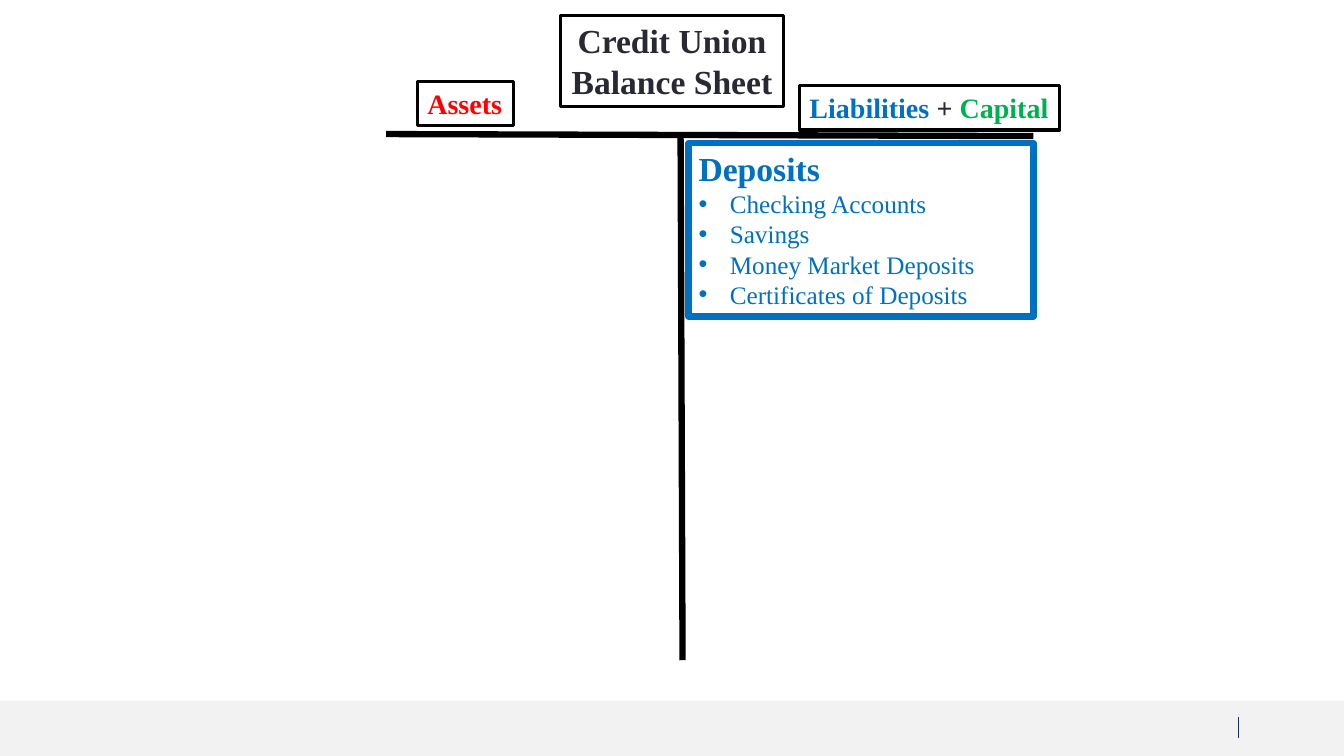
"""Build a slide with a credit union balance sheet as a T-account."""
from lxml.etree import SubElement
from pptx import Presentation
from pptx.dml.color import RGBColor
from pptx.enum.shapes import MSO_CONNECTOR, MSO_SHAPE
from pptx.enum.text import MSO_ANCHOR, MSO_AUTO_SIZE, PP_ALIGN
from pptx.oxml.ns import qn
from pptx.util import Inches, Pt

BLACK = RGBColor(0x00, 0x00, 0x00)
INK = RGBColor(0x29, 0x29, 0x34)
RED = RGBColor(0xFF, 0x00, 0x00)
BLUE = RGBColor(0x00, 0x70, 0xC0)
GREEN = RGBColor(0x00, 0xB0, 0x50)
NAVY = RGBColor(0x19, 0x30, 0x61)
PALE = RGBColor(0xF2, 0xF2, 0xF2)


def add_run(p, text, *, size, color, bold=True, font="Times New Roman"):
    r = p.add_run()
    r.text = text
    r.font.name = font
    r.font.size = Pt(size)
    r.font.bold = bold
    r.font.color.rgb = color


class SlideBuilder:
    indent = Inches(0.31)

    def __init__(self, slide):
        self.s = slide

    def band(self, x, y, w, h, color):
        sp = self.s.shapes.add_shape(
            MSO_SHAPE.RECTANGLE, Inches(x), Inches(y), Inches(w), Inches(h))
        sp.shadow.inherit = False
        sp.fill.solid()
        sp.fill.fore_color.rgb = color
        sp.line.fill.background()

    def line(self, x1, y1, x2, y2, color, width):
        cn = self.s.shapes.add_connector(
            MSO_CONNECTOR.STRAIGHT, Inches(x1), Inches(y1), Inches(x2), Inches(y2))
        cn.line.color.rgb = color
        cn.line.width = Pt(width)
        SubElement(cn._element.spPr, qn("a:effectLst"))

    def box(self, x, y, w, h, paragraphs, *, color=BLACK, width=2.25,
            size=20, align=PP_ALIGN.LEFT, wrap=False):
        sp = self.s.shapes.add_textbox(Inches(x), Inches(y), Inches(w), Inches(h))
        sp.line.color.rgb = color
        sp.line.width = Pt(width)
        tf = sp.text_frame
        tf.word_wrap = wrap
        tf.auto_size = MSO_AUTO_SIZE.SHAPE_TO_FIT_TEXT
        tf.vertical_anchor = MSO_ANCHOR.TOP
        for i, runs in enumerate(paragraphs):
            p = tf.add_paragraph() if i else tf.paragraphs[0]
            p.alignment = align
            for text, run_color in runs:
                add_run(p, text, size=size, color=run_color)
        return tf

    def bullet(self, tf, text, color, size):
        p = tf.add_paragraph()
        pPr = p._p.get_or_add_pPr()
        pPr.set("marL", str(self.indent))
        pPr.set("indent", str(-self.indent))
        SubElement(pPr, qn("a:buFont")).set("typeface", "Arial")
        SubElement(pPr, qn("a:buChar")).set("char", "•")
        add_run(p, text, size=size, color=color, bold=False)


def main():
    prs = Presentation()
    prs.slide_width, prs.slide_height = Inches(13.33), Inches(7.5)
    s = SlideBuilder(prs.slides.add_slide(prs.slide_layouts[6]))

    s.band(0, 6.95, 13.33, 0.55, PALE)
    s.line(12.28, 7.11, 12.28, 7.32, NAVY, 0.5)

    s.box(5.56, 0.15, 2.21, 0.91,
          [[("Credit Union", INK)], [("Balance Sheet", INK)]],
          size=24, align=PP_ALIGN.CENTER)
    s.line(3.83, 1.33, 10.25, 1.35, BLACK, 4.5)
    s.line(6.77, 6.55, 6.75, 1.33, BLACK, 4.5)
    s.box(4.14, 0.81, 0.95, 0.44, [[("Assets", RED)]])
    s.box(7.93, 0.85, 2.58, 0.44,
          [[("Liabilities ", BLUE), ("+ ", INK), ("Capital", GREEN)]])

    deposits = s.box(6.83, 1.42, 3.42, 1.72, [[("Deposits", BLUE)]],
                     color=BLUE, width=4.5, size=24, wrap=True)
    for item in ("Checking Accounts", "Savings", "Money Market Deposits",
                 "Certificates of Deposits"):
        s.bullet(deposits, item, BLUE, 18)

    prs.save("out.pptx")


if __name__ == "__main__":
    main()
